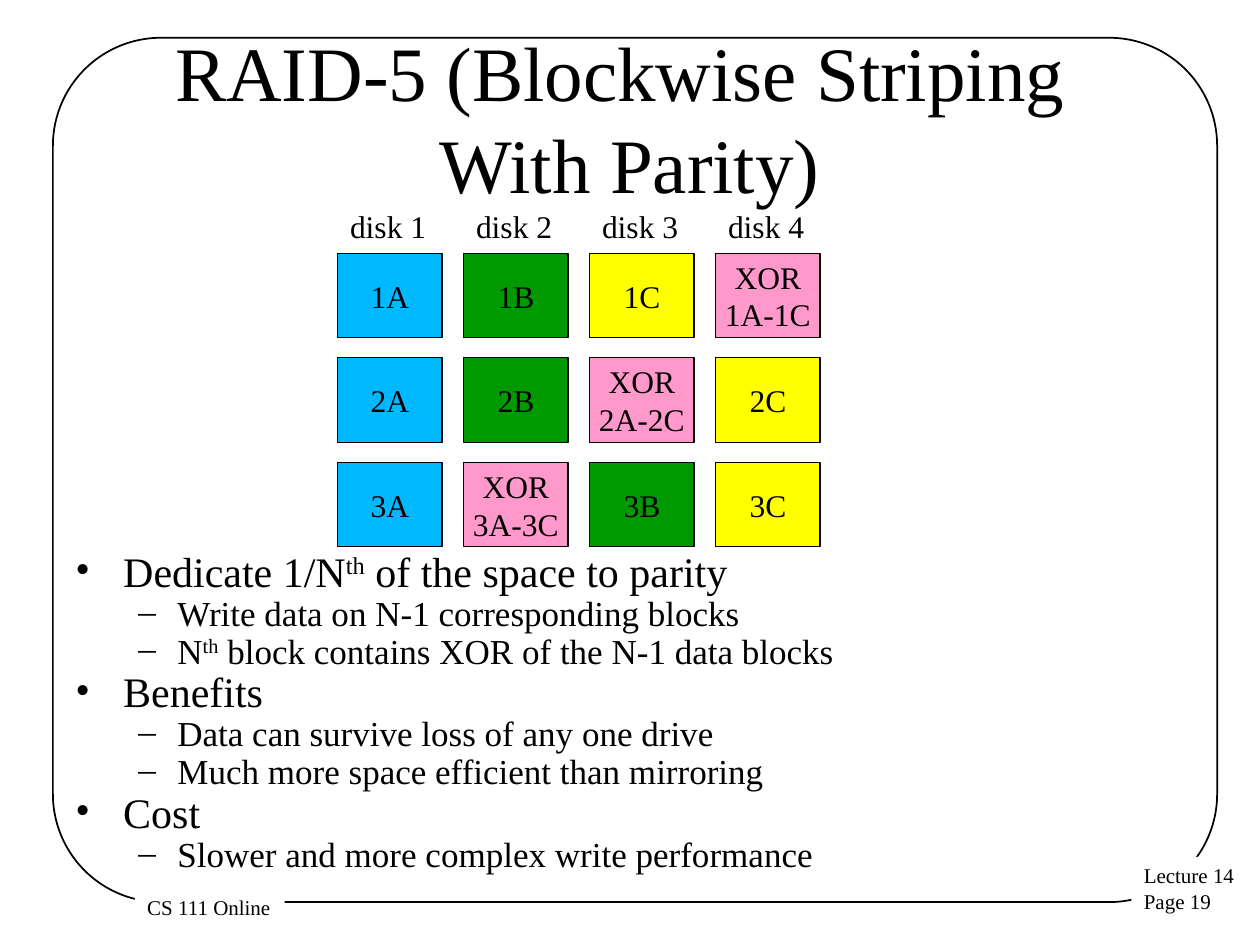
from lxml.etree import SubElement
from pptx import Presentation
from pptx.dml.color import RGBColor
from pptx.enum.shapes import MSO_SHAPE
from pptx.enum.text import MSO_ANCHOR, MSO_AUTO_SIZE, PP_ALIGN
from pptx.oxml.ns import qn
from pptx.util import Inches, Pt

FONT = "Times New Roman"
COLOURS = {
    "ink": "000000",
    "paper": "FFFFFF",
    "A": "00B8FF",
    "B": "009900",
    "C": "FFFF00",
    "XOR": "FF99CC",
}
STRIPES = [
    ["1A", "1B", "1C", "XOR\n1A-1C"],
    ["2A", "2B", "XOR\n2A-2C", "2C"],
    ["3A", "XOR\n3A-3C", "3B", "3C"],
]
GRID_LEFT, GRID_TOP = 2.68, 2.01
COLUMN_STEP, ROW_STEP = 1, 0.83
BLOCK_WIDTH, BLOCK_HEIGHT = 0.83, 0.67

POINTS = [
    (0, ["Dedicate 1/N", "th", " of the space to parity"]),
    (1, ["Write data on N-1 corresponding blocks"]),
    (1, ["N", "th", " block contains XOR of the N-1 data blocks"]),
    (0, ["Benefits"]),
    (1, ["Data can survive loss of any one drive"]),
    (1, ["Much more space efficient than mirroring"]),
    (0, ["Cost"]),
    (1, ["Slower and more complex write performance"]),
]
LEVELS = [
    {"size": 24, "margin": 0.38, "indent": -0.38, "bullet": "•"},
    {"size": 20, "margin": 0.81, "indent": -0.31, "bullet": "–"},
]


def colour(name):
    return RGBColor.from_string(COLOURS[name])


def format_span(span, size):
    span.font.name = FONT
    span.font.size = Pt(size)
    span.font.color.rgb = colour("ink")


def write(shape, text, size, align=PP_ALIGN.LEFT, anchor=MSO_ANCHOR.TOP, wrap=False):
    frame = shape.text_frame
    frame.text = text
    frame.word_wrap = wrap
    frame.auto_size = MSO_AUTO_SIZE.NONE
    frame.vertical_anchor = anchor
    for para in frame.paragraphs:
        para.alignment = align
        for span in para.runs:
            format_span(span, size)


def place(shape, left, top, width, height):
    shape.left, shape.top = Inches(left), Inches(top)
    shape.width, shape.height = Inches(width), Inches(height)


def add_box(page, kind, area, fill=None, line_width=None):
    box = page.shapes.add_shape(kind, *map(Inches, area))
    box.shadow.inherit = False
    if fill:
        box.fill.solid()
        box.fill.fore_color.rgb = colour(fill)
    else:
        box.fill.background()
    if line_width:
        box.line.color.rgb = colour("ink")
        box.line.width = Pt(line_width)
    else:
        box.line.fill.background()
    return box


def add_frame(page):
    frame = add_box(page, MSO_SHAPE.ROUNDED_RECTANGLE, (0.42, 0.3, 9.24, 6.86), line_width=1)
    frame.adjustments[0] = 0.125


def add_footer(page, text, area):
    write(add_box(page, MSO_SHAPE.RECTANGLE, area, "paper"), text, 12)


def add_title(page, text):
    title = page.shapes.title
    place(title, 0.5, 0.3, 9, 1.25)
    write(title, text, 44, PP_ALIGN.CENTER, MSO_ANCHOR.MIDDLE, True)


def add_block(page, row, column, text):
    fill = "XOR" if text.startswith("XOR") else text[-1]
    area = (GRID_LEFT + column * COLUMN_STEP, GRID_TOP + row * ROW_STEP,
            BLOCK_WIDTH, BLOCK_HEIGHT)
    block = add_box(page, MSO_SHAPE.RECTANGLE, area, fill, 0.75)
    write(block, text, 18, PP_ALIGN.CENTER, MSO_ANCHOR.MIDDLE)


def add_disk_label(page, column):
    area = (GRID_LEFT + column * COLUMN_STEP, 1.59, COLUMN_STEP, 0.4)
    label = page.shapes.add_textbox(*map(Inches, area))
    write(label, f"disk {column + 1}", 18, wrap=True)


def format_point(para, level):
    style = LEVELS[level]
    para.level = level
    para.line_spacing = 0.73
    para.space_before = Pt(style["size"] * 0.2)
    properties = para._p.get_or_add_pPr()
    properties.set("marL", str(Inches(style["margin"])))
    properties.set("indent", str(Inches(style["indent"])))
    SubElement(properties, qn("a:buFont")).set("typeface", FONT)
    SubElement(properties, qn("a:buChar")).set("char", style["bullet"])


def add_points(page):
    box = page.shapes.add_textbox(*map(Inches, (0.5, 4.38, 9, 3.1)))
    frame = box.text_frame
    frame.word_wrap = True
    for index, (level, parts) in enumerate(POINTS):
        para = frame.add_paragraph() if index else frame.paragraphs[0]
        format_point(para, level)
        for part in parts:
            span = para.add_run()
            span.text = part
            format_span(span, LEVELS[level]["size"])
            if part == "th":
                span._r.get_or_add_rPr().set("baseline", "30000")


def main():
    deck = Presentation()
    deck.slide_width, deck.slide_height = Inches(10), Inches(7.5)
    page = deck.slides.add_slide(deck.slide_layouts[5])
    add_frame(page)
    add_footer(page, "Lecture 14\nPage 19", (8.98, 6.8, 0.93, 0.51))
    add_footer(page, "CS 111 Online", (1.07, 7.05, 1.19, 0.3))
    add_title(page, "RAID-5 (Blockwise Striping \vWith Parity)")
    add_points(page)
    for row, stripe in enumerate(STRIPES):
        for column, text in enumerate(stripe):
            add_block(page, row, column, text)
    for column in range(len(STRIPES[0])):
        add_disk_label(page, column)
    deck.save("out.pptx")


if __name__ == "__main__":
    main()
